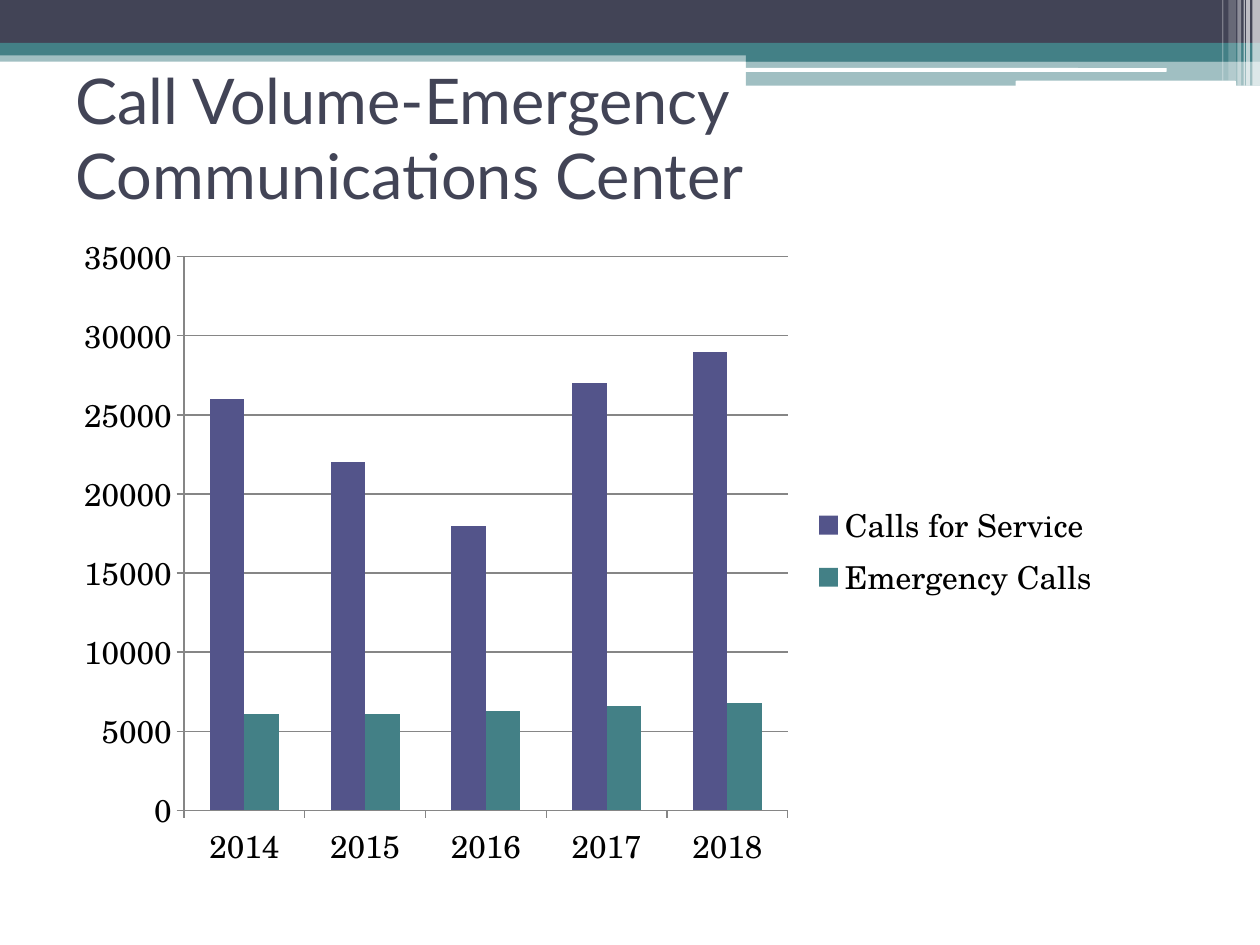
"""Build the emergency call volume slide with its banded header and column chart."""
import dataclasses

import pptx
import pptx.chart.data
import pptx.dml.color
import pptx.enum.chart
import pptx.enum.shapes
import pptx.enum.text
import pptx.oxml
import pptx.oxml.ns
import pptx.util

EMU_PER_PX = 9144


@dataclasses.dataclass(frozen=True)
class Theme:
    dark: str = "424456"
    teal: str = "438086"
    violet: str = "53548A"
    white: str = "FFFFFF"
    black: str = "000000"
    grid: str = "868686"
    title_font: str = "Lato"
    chart_font: str = "TeX Gyre Schola"
    title_size: int = 36
    chart_size: int = 18


@dataclasses.dataclass(frozen=True)
class Bar:
    left: int
    top: int
    width: int
    height: int
    color: str
    opacity: int = 100
    rounded: bool = False


@dataclasses.dataclass(frozen=True)
class Series:
    name: str
    values: tuple
    color: str


THEME = Theme()
HEADER_BARS = (
    Bar(0, 40, 1000, 9, THEME.teal, 50),
    Bar(0, 0, 1000, 34, THEME.dark),
    Bar(0, 34, 1000, 10, THEME.teal),
    Bar(592, 39, 408, 10, THEME.teal),
    Bar(592, 48, 408, 20, THEME.teal, 50),
    Bar(591, 54, 335, 3, THEME.white, rounded=True),
    Bar(806, 64, 175, 5, THEME.white, rounded=True),
    Bar(994, 0, 6, 68, THEME.white, 65),
    Bar(989, 0, 3, 68, THEME.white, 65),
    Bar(987, 0, 1, 68, THEME.white, 60),
    Bar(982, 0, 3, 68, THEME.white, 40),
    Bar(975, 0, 6, 64, THEME.white, 20),
    Bar(970, 0, 1, 64, THEME.white, 30),
)
YEARS = ("2014", "2015", "2016", "2017", "2018")
CALL_SERIES = (
    Series("Calls for Service", (26000, 22000, 18000, 27000, 29000), THEME.violet),
    Series("Emergency Calls", (6100, 6100, 6300, 6600, 6800), THEME.teal),
)


def px(*lengths: int) -> list:
    return [pptx.util.Emu(length * EMU_PER_PX) for length in lengths]


def rgb(color: str) -> pptx.dml.color.RGBColor:
    return pptx.dml.color.RGBColor.from_string(color)


def draw_bar(page, bar: Bar) -> None:
    kinds = pptx.enum.shapes.MSO_SHAPE
    kind = kinds.ROUNDED_RECTANGLE if bar.rounded else kinds.RECTANGLE
    shape = page.shapes.add_shape(kind, *px(bar.left, bar.top, bar.width, bar.height))
    shape.shadow.inherit = False
    shape.line.fill.background()
    shape.fill.solid()
    shape.fill.fore_color.rgb = rgb(bar.color)
    if bar.opacity < 100:
        color = shape.fill._xPr.find(".//" + pptx.oxml.ns.qn("a:srgbClr"))
        alpha = pptx.oxml.parse_xml(f'<a:alpha {pptx.oxml.ns.nsdecls("a")} val="{bar.opacity * 1000}"/>')
        color.append(alpha)


def write_text(page, text: str, *, place: tuple, font: str, size: int, color: str) -> None:
    box = page.shapes.add_textbox(*px(*place))
    frame = box.text_frame
    frame.word_wrap = True
    frame.vertical_anchor = pptx.enum.text.MSO_ANCHOR.MIDDLE
    span = frame.paragraphs[0].add_run()
    span.text = text
    span.font.name = font
    span.font.size = pptx.util.Pt(size)
    span.font.color.rgb = rgb(color)


def draw_chart(page, categories: tuple, series_list: tuple, place: tuple) -> None:
    data = pptx.chart.data.CategoryChartData()
    data.categories = categories
    for series in series_list:
        data.add_series(series.name, series.values)
    kind = pptx.enum.chart.XL_CHART_TYPE.COLUMN_CLUSTERED
    chart = page.shapes.add_chart(kind, *px(*place), data).chart
    chart.has_title = False
    chart.font.name = THEME.chart_font
    chart.font.size = pptx.util.Pt(THEME.chart_size)
    chart.font.color.rgb = rgb(THEME.black)
    chart.has_legend = True
    chart.legend.position = pptx.enum.chart.XL_LEGEND_POSITION.RIGHT
    chart.legend.include_in_layout = False

    plot = chart.plots[0]
    plot.vary_by_categories = False
    plot.gap_width = 150
    plot.overlap = 0
    for column, series in zip(plot.series, series_list):
        column.format.fill.solid()
        column.format.fill.fore_color.rgb = rgb(series.color)

    chart.value_axis.has_major_gridlines = True
    chart.value_axis.minimum_scale = 0
    chart.value_axis.maximum_scale = 35000
    chart.value_axis.major_unit = 5000
    for axis in (chart.category_axis, chart.value_axis):
        axis.major_tick_mark = pptx.enum.chart.XL_TICK_MARK.OUTSIDE
        axis.minor_tick_mark = pptx.enum.chart.XL_TICK_MARK.NONE
    for part in (chart.category_axis, chart.value_axis, chart.value_axis.major_gridlines):
        part.format.line.color.rgb = rgb(THEME.grid)
        part.format.line.width = pptx.util.Pt(0.75)


def main() -> None:
    deck = pptx.Presentation()
    deck.slide_width, deck.slide_height = px(1000, 750)
    page = deck.slides.add_slide(deck.slide_layouts[6])
    page.background.fill.solid()
    page.background.fill.fore_color.rgb = rgb(THEME.white)
    for bar in HEADER_BARS:
        draw_bar(page, bar)
    write_text(
        page,
        "Call Volume-Emergency Communications Center",
        place=(50, 50, 900, 117),
        font=THEME.title_font,
        size=THEME.title_size,
        color=THEME.dark,
    )
    draw_chart(page, YEARS, CALL_SERIES, (50, 175, 833, 525))
    deck.save("out.pptx")


if __name__ == "__main__":
    main()
